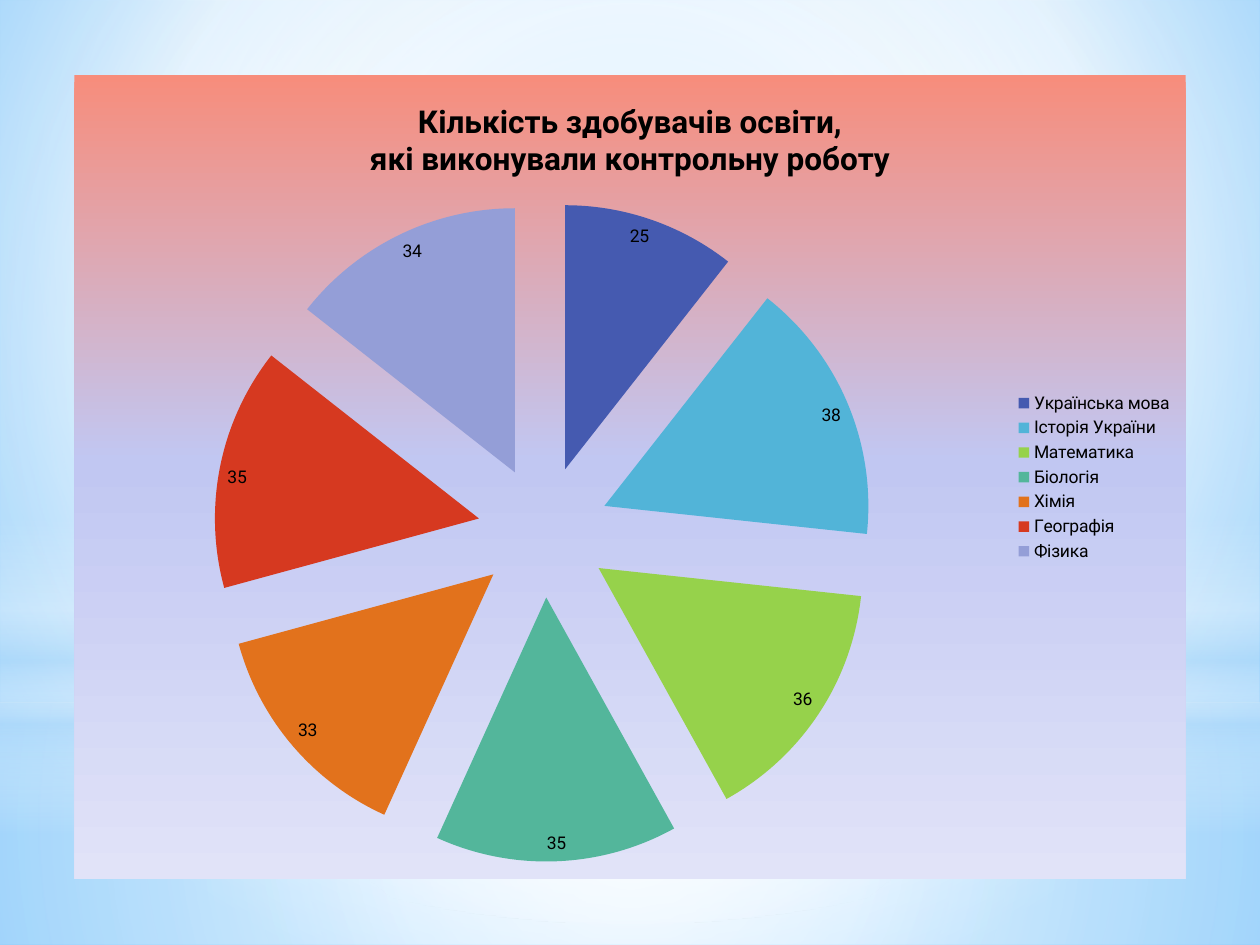
from dataclasses import dataclass

from lxml.etree import SubElement
from pptx import Presentation
from pptx.chart.data import CategoryChartData
from pptx.dml.color import RGBColor
from pptx.enum.chart import XL_CHART_TYPE as ChartType
from pptx.enum.chart import XL_LABEL_POSITION as LabelPosition
from pptx.enum.chart import XL_LEGEND_POSITION as LegendPosition
from pptx.enum.shapes import MSO_SHAPE as Preset
from pptx.oxml import parse_xml
from pptx.oxml.ns import nsdecls, qn
from pptx.util import Cm, Pt


@dataclass(frozen=True)
class Box:
    """A rectangle in centimetres."""
    left: float
    top: float
    width: float
    height: float

    def inner(self, left, top, width, height):
        """Return the lengths of a part placed relative to this box."""
        return Cm(self.left + left), Cm(self.top + top), Cm(width), Cm(height)


@dataclass(frozen=True)
class Gradient:
    """Stops of position, colour and opacity, with an angle or a focus."""
    stops: tuple
    focus: tuple = ()
    angle: int = 90


CENTRE = (50, 50, 50, 50)


@dataclass(frozen=True)
class Theme:
    """Colours and type sizes of the slide."""
    font: str = "Roboto"
    text: RGBColor = RGBColor(0, 0, 0)
    title_size: Pt = Pt(18)
    body_size: Pt = Pt(10)
    slices: tuple = ("455AB0", "52B4D8", "96D24B", "53B69B", "E2721C", "D63920", "949ED7")
    sky: Gradient = Gradient(
        ((0, "9ED5FF", 100), (60, "FFFFFF", 100), (100, "5BB9FF", 100)), (20, 10, 20, 60))
    ground: Gradient = Gradient(
        ((0, "FFFFFF", 91), (37, "FFFFFF", 76), (100, "B4DCFA", 79)), CENTRE)
    air: Gradient = Gradient(
        ((0, "FFFFFF", 89), (48, "FFFFFF", 62), (100, "B4DCFA", 79)), CENTRE)
    horizon: Gradient = Gradient(
        ((0, "FFFFFF", 0), (29, "FFFFFF", 30), (45, "B4DCFA", 40),
         (55, "FFFFFF", 26), (65, "B4DCFA", 60), (100, "FFFFFF", 0)))
    glow: Gradient = Gradient(((0, "FFFFFF", 100), (56, "FFFFFF", 0)), CENTRE)
    panel: Gradient = Gradient(
        ((0, "F78D7C", 100), (48, "C1C7F2", 100), (100, "E1E3F8", 100)))


THEME = Theme()
TITLE = ("Кількість здобувачів освіти,", "які виконували контрольну роботу")
PUPILS = {
    "Українська мова": 25,
    "Історія України": 38,
    "Математика": 36,
    "Біологія": 35,
    "Хімія": 33,
    "Географія": 35,
    "Фізика": 34,
}


def gradient_fill(gradient):
    """Build the fill element of a gradient."""
    fill = parse_xml(f'<a:gradFill {nsdecls("a")} rotWithShape="1"><a:gsLst/></a:gradFill>')
    for position, colour, opacity in gradient.stops:
        stop = SubElement(fill[0], qn("a:gs"), pos=str(position * 1000))
        shade = SubElement(stop, qn("a:srgbClr"), val=colour)
        if opacity < 100:
            SubElement(shade, qn("a:alpha"), val=str(opacity * 1000))
    if gradient.focus:
        spread = SubElement(fill, qn("a:path"), path="circle")
        sides = {side: str(share * 1000) for side, share in zip("ltrb", gradient.focus)}
        SubElement(spread, qn("a:fillToRect"), **sides)
    else:
        SubElement(fill, qn("a:lin"), ang=str(gradient.angle * 60000), scaled="0")
    return fill


def paint(fill, owner, gradient):
    """Give a slide background or a shape its gradient."""
    fill.solid()
    solid = next(owner.iter(qn("a:solidFill")))
    solid.getparent().replace(solid, gradient_fill(gradient))


def set_format(target, values):
    """Set each attribute of the target from a dict."""
    for name, value in values.items():
        setattr(target, name, value)


def add_backdrop(slide, box, theme):
    """Paint the sky and its layers of light."""
    paint(slide.background.fill, slide.element, theme.sky)
    skyline = 14.17
    layers = (
        (Preset.RECTANGLE, skyline, box.height - skyline, theme.ground),
        (Preset.RECTANGLE, 0, skyline, theme.air),
        (Preset.RECTANGLE, 10.46, 6.35, theme.horizon),
        (Preset.OVAL, 4.45, skyline, theme.glow),
    )
    for preset, top, height, gradient in layers:
        layer = slide.shapes.add_shape(preset, *box.inner(0, top, box.width, height))
        layer.shadow.inherit = False
        layer.line.fill.background()
        paint(layer.fill, layer.element.spPr, gradient)


def add_title(chart, theme):
    """Write the two lines of the chart title."""
    heading = chart.chart_title.text_frame
    heading.text = "\n".join(TITLE)
    for line in heading.paragraphs:
        set_format(line.runs[0].font, {"name": theme.font, "size": theme.title_size, "bold": True})
        line.runs[0].font.color.rgb = theme.text


def add_pupils_pie(slide, box, theme):
    """Place the exploded pie of pupils per subject."""
    pupils = CategoryChartData()
    pupils.categories = list(PUPILS)
    pupils.add_series("Series 1", list(PUPILS.values()))
    frame = box.inner(0, 0, box.width, box.height)
    chart = slide.shapes.add_chart(ChartType.PIE, *frame, pupils).chart
    set_format(chart.font, {"name": theme.font, "size": theme.body_size})
    chart.font.color.rgb = theme.text
    add_title(chart, theme)

    chart.has_legend = True
    set_format(chart.legend, {"position": LegendPosition.RIGHT, "include_in_layout": False})

    plot = chart.plots[0]
    set_format(plot, {"vary_by_categories": True, "has_data_labels": True})
    set_format(plot.data_labels, {"show_value": True, "show_percentage": False,
                                  "position": LabelPosition.INSIDE_END})

    subjects = plot.series[0]
    explosion = parse_xml(f'<c:explosion {nsdecls("c")} val="25"/>')
    subjects._element.find(qn("c:tx")).addnext(explosion)
    for index, colour in enumerate(theme.slices):
        slice_fill = subjects.points[index].format.fill
        slice_fill.solid()
        slice_fill.fore_color.rgb = RGBColor.from_string(colour)

    panel = parse_xml(f'<c:spPr {nsdecls("c", "a")}><a:ln><a:noFill/></a:ln></c:spPr>')
    panel.insert(0, gradient_fill(theme.panel))
    chart._chartSpace.find(qn("c:chart")).addnext(panel)


def main():
    """Build and save the slide."""
    page = Box(0, 0, 25.4, 19.05)
    deck = Presentation()
    set_format(deck, {"slide_width": Cm(page.width), "slide_height": Cm(page.height)})
    slide = deck.slides.add_slide(deck.slide_layouts[6])
    add_backdrop(slide, page, THEME)
    add_pupils_pie(slide, Box(1.5, 1.52, 22.4, 16.2), THEME)
    deck.save("out.pptx")


if __name__ == "__main__":
    main()
